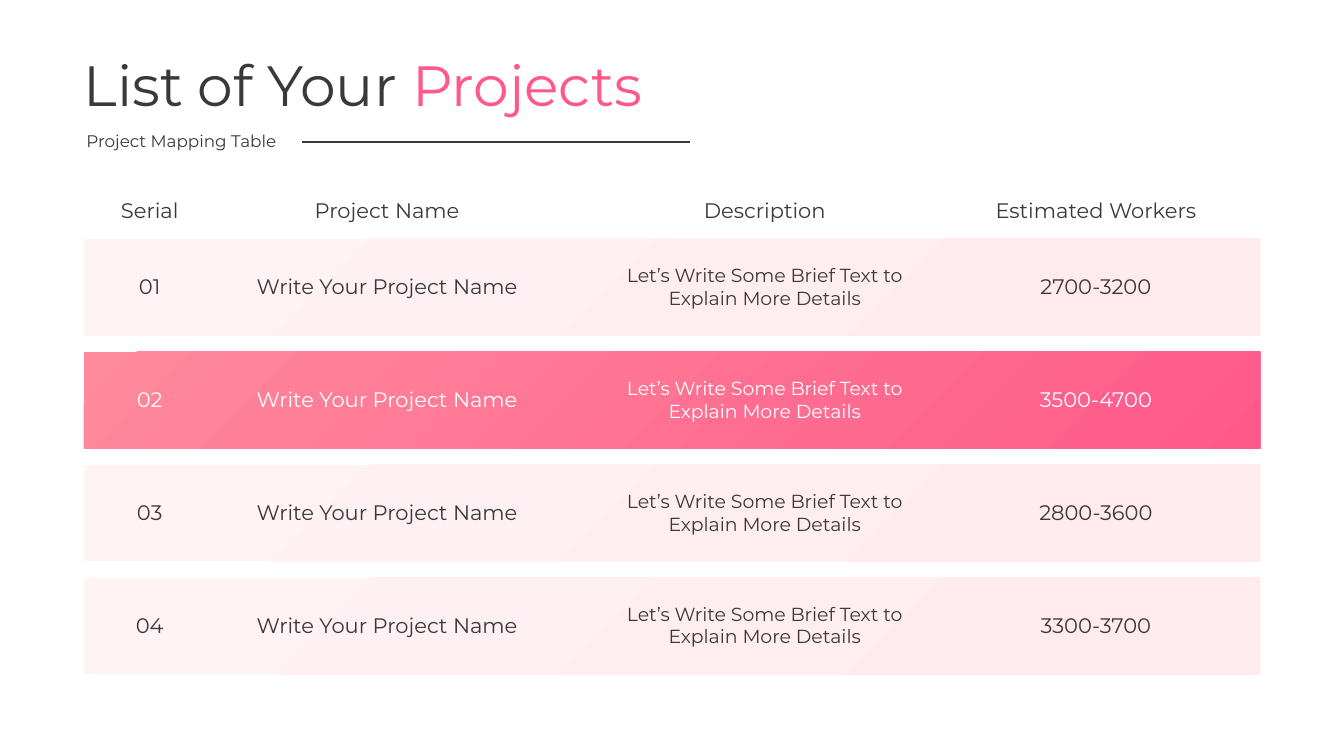
from itertools import accumulate

from lxml import etree
from pptx import Presentation
from pptx.dml.color import RGBColor
from pptx.enum.shapes import MSO_CONNECTOR, MSO_SHAPE
from pptx.enum.text import MSO_ANCHOR, PP_ALIGN
from pptx.oxml.ns import qn
from pptx.util import Inches, Pt

LEFT, CENTER = PP_ALIGN.LEFT, PP_ALIGN.CENTER
MIDDLE = MSO_ANCHOR.MIDDLE
RECTANGLE, STRAIGHT = MSO_SHAPE.RECTANGLE, MSO_CONNECTOR.STRAIGHT

FONT = "Montserrat"
INK, WHITE = "3B3838", "FFFFFF"
PALE = [("FFEBEE", 0.1), ("FFF3F5", 1)]
PINK = [("FF598A", 0), ("FF8A9C", 1)]
NO_STYLE_NO_GRID = "{2D5ABB26-0587-4C30-8999-92F81FD0307C}"

# Table grid, in inches
GRID_LEFT, GRID_TOP = 0.83, 1.9
COLUMNS = [1.31, 3.4, 4.09, 2.48]
HEADER_HEIGHT, ROW_PITCH = 0.39, 1.12
BAR_WIDTH, BAR_HEIGHT = 11.67, 0.96

HEADINGS = ["Serial", "Project Name", "Description", "Estimated Workers"]
PROJECT = "Write Your Project Name"
DETAILS = "Let’s Write Some Brief Text to\nExplain More Details"
WORKERS = ["2700-3200", "3500-4700", "2800-3600", "3300-3700"]
HIGHLIGHTED = 1
DETAILS_COLUMN = 2


def color(hex_value):
    return RGBColor.from_string(hex_value)


def style_text(frame, size, hex_value, align):
    for paragraph in frame.paragraphs:
        paragraph.alignment = align
        for run in paragraph.runs:
            run.font.name = FONT
            run.font.size = Pt(size)
            run.font.color.rgb = color(hex_value)


def set_gradient(fill, stops):
    fill.gradient()
    fill.gradient_angle = 180
    for stop, (hex_value, position) in zip(fill.gradient_stops, stops):
        stop.color.rgb = color(hex_value)
        stop.position = position


def radiate_from_corner(shape):
    """Turn a linear gradient into a circular one from the lower right."""
    gradient = shape._element.spPr.find(qn("a:gradFill"))
    gradient.remove(gradient.find(qn("a:lin")))
    circle = etree.SubElement(gradient, qn("a:path"), {"path": "circle"})
    etree.SubElement(circle, qn("a:fillToRect"), {"l": "100000", "t": "100000"})


def add_title(slide):
    title = slide.shapes.title
    title.left, title.top = Inches(0.73), Inches(0.44)
    title.width, title.height = Inches(6.32), Inches(0.78)
    frame = title.text_frame
    frame.text = "List of Your "
    frame.word_wrap = False
    frame.vertical_anchor = MIDDLE
    accent = frame.paragraphs[0].add_run()
    accent.text = "Projects"
    style_text(frame, 40.5, INK, LEFT)
    set_gradient(accent.font.fill, PINK)


def add_subtitle(slide):
    subtitle = slide.shapes.add_textbox(
        Inches(0.76), Inches(1.25), Inches(2.17), Inches(0.3))
    subtitle.text_frame.text = "Project Mapping Table"
    subtitle.text_frame.word_wrap = False
    style_text(subtitle.text_frame, 12, INK, LEFT)

    rule = slide.shapes.add_connector(
        STRAIGHT, Inches(3), Inches(1.41), Inches(6.84), Inches(1.41))
    rule.line.color.rgb = color(INK)
    rule.line.width = Pt(1.5)
    etree.SubElement(rule._element.spPr, qn("a:effectLst"))


def add_bar(slide, row_top, stops):
    bar = slide.shapes.add_shape(
        RECTANGLE, Inches(GRID_LEFT),
        Inches(row_top + (ROW_PITCH - BAR_HEIGHT) / 2),
        Inches(BAR_WIDTH), Inches(BAR_HEIGHT))
    bar.shadow.inherit = False
    bar.line.fill.background()
    set_gradient(bar.fill, stops)
    radiate_from_corner(bar)


def fill_cell(cell, text, size, hex_value):
    cell.fill.background()
    cell.vertical_anchor = MIDDLE
    cell.margin_top = cell.margin_bottom = 0
    cell.text_frame.text = text
    style_text(cell.text_frame, size, hex_value, CENTER)


def add_project_table(slide, rows):
    heights = [HEADER_HEIGHT] + [ROW_PITCH] * (len(rows) - 1)
    table = slide.shapes.add_table(
        len(rows), len(COLUMNS), Inches(GRID_LEFT), Inches(GRID_TOP),
        Inches(sum(COLUMNS)), Inches(sum(heights))).table
    table.first_row = table.horz_banding = False
    table._tbl.tblPr.find(qn("a:tableStyleId")).text = NO_STYLE_NO_GRID
    for column, width in zip(table.columns, COLUMNS):
        column.width = Inches(width)
    for row, height in zip(table.rows, heights):
        row.height = Inches(height)
    for r, texts in enumerate(rows):
        ink = WHITE if r == HIGHLIGHTED + 1 else INK
        for c, text in enumerate(texts):
            size = 13.5 if r and c == DETAILS_COLUMN else 15
            fill_cell(table.cell(r, c), text, size, ink)


def main():
    prs = Presentation()
    prs.slide_width, prs.slide_height = Inches(13.33), Inches(7.5)
    slide = prs.slides.add_slide(prs.slide_layouts[5])

    # Heading
    add_title(slide)
    add_subtitle(slide)

    # Coloured bars behind the table rows
    row_tops = accumulate([GRID_TOP + HEADER_HEIGHT]
                          + [ROW_PITCH] * (len(WORKERS) - 1))
    for index, row_top in enumerate(row_tops):
        add_bar(slide, row_top, PINK if index == HIGHLIGHTED else PALE)

    # Project table
    projects = [[f"{number:02}", PROJECT, DETAILS, workers]
                for number, workers in enumerate(WORKERS, 1)]
    add_project_table(slide, [HEADINGS] + projects)

    prs.save("out.pptx")


if __name__ == "__main__":
    main()
